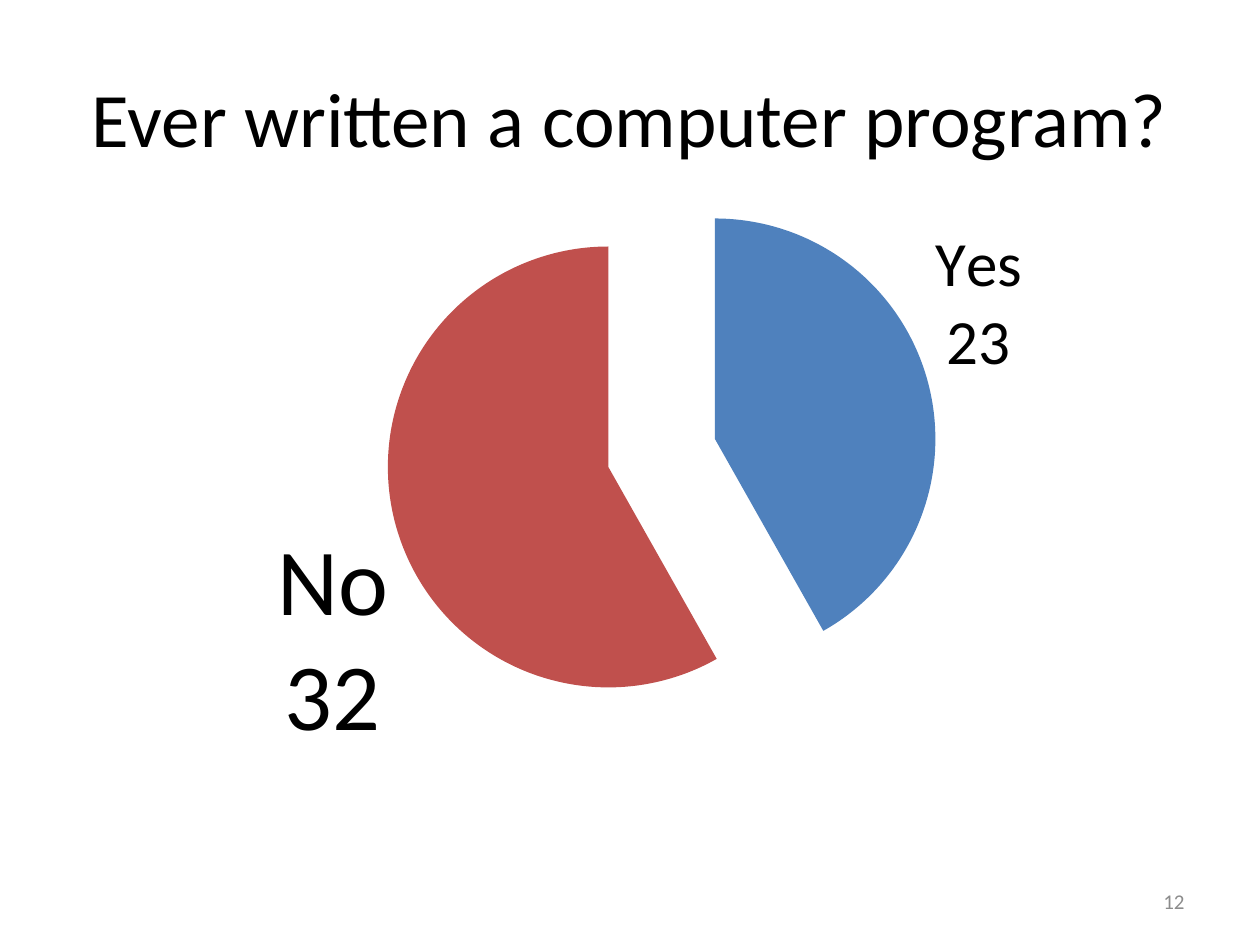
import pptx
import pptx.chart.data
import pptx.dml.color
import pptx.enum.chart
import pptx.enum.text
import pptx.oxml
import pptx.oxml.ns
import pptx.util

BLACK = pptx.dml.color.RGBColor(0x00, 0x00, 0x00)
GRAY = pptx.dml.color.RGBColor(0x8C, 0x8C, 0x8C)
BLUE = pptx.dml.color.RGBColor(0x4F, 0x81, 0xBD)
RED = pptx.dml.color.RGBColor(0xC0, 0x50, 0x4D)

ALIGN = pptx.enum.text.PP_ALIGN
FONT = "Calibri"
SCALE = 914400 // 126
SLIDE_SIZE = (1260, 945)

TEXTS = [
    ("Ever written a computer program?", (63, 38, 1134, 157), 44, BLACK, ALIGN.CENTER),
    ("12", (903, 876, 294, 50), 12, GRAY, ALIGN.RIGHT),
]
ANSWERS = [("Yes", 23, BLUE, 36), ("No", 32, RED, 54)]
CHART_BOX = (105, 126, 1081, 735)
PIE_BOX = (384, 181, 548, 548)
EXPLOSION = 25


def px(*lengths):
    return [pptx.util.Emu(length * SCALE) for length in lengths]


def style_font(font, size, color):
    font.name = FONT
    font.size = pptx.util.Pt(size)
    font.color.rgb = color


def chart_xml(tag, content="", value=None):
    attribute = "" if value is None else f' val="{value}"'
    namespace = pptx.oxml.ns.nsdecls("c")
    return pptx.oxml.parse_xml(f"<c:{tag} {namespace}{attribute}>{content}</c:{tag}>")


def add_text(slide, text, box, size, color, alignment):
    shape = slide.shapes.add_textbox(*px(*box))
    frame = shape.text_frame
    frame.word_wrap = True
    frame.vertical_anchor = pptx.enum.text.MSO_ANCHOR.MIDDLE
    paragraph = frame.paragraphs[0]
    paragraph.alignment = alignment
    run = paragraph.add_run()
    run.text = text
    style_font(run.font, size, color)


def place_pie(chart):
    left, top, width, height = CHART_BOX
    pie_left, pie_top, pie_width, pie_height = PIE_BOX
    fractions = {
        "x": (pie_left - left) / width,
        "y": (pie_top - top) / height,
        "w": pie_width / width,
        "h": pie_height / height,
    }
    content = '<c:layoutTarget val="inner"/><c:xMode val="edge"/><c:yMode val="edge"/>'
    content += "".join(f'<c:{key} val="{value:.2f}"/>' for key, value in fractions.items())
    plot_area = chart.element.xpath(".//c:plotArea")[0]
    for layout in plot_area.xpath("./c:layout"):
        plot_area.remove(layout)
    plot_area.insert(0, chart_xml("layout", f"<c:manualLayout>{content}</c:manualLayout>"))


def add_pie(slide):
    data = pptx.chart.data.CategoryChartData()
    data.categories = [answer[0] for answer in ANSWERS]
    data.add_series("Series 1", [answer[1] for answer in ANSWERS])
    frame = slide.shapes.add_chart(
        pptx.enum.chart.XL_CHART_TYPE.PIE, *px(*CHART_BOX), data
    )
    chart = frame.chart
    chart.has_title = False
    chart.has_legend = False
    style_font(chart.font, 18, BLACK)
    plot = chart.plots[0]
    plot.vary_by_categories = True
    series_element = chart.element.xpath(".//c:ser")[0]
    series_element.xpath("./c:tx")[0].addnext(chart_xml("explosion", value=EXPLOSION))
    for index, (name, count, color, size) in enumerate(ANSWERS):
        point = plot.series[0].points[index]
        point.format.fill.solid()
        point.format.fill.fore_color.rgb = color
        label = point.data_label
        style_font(label.font, size, BLACK)
        label.position = pptx.enum.chart.XL_LABEL_POSITION.OUTSIDE_END
    for label_element in series_element.xpath(".//c:dLbl"):
        label_element.xpath("./c:showCatName")[0].set("val", "1")
        label_element.append(chart_xml("separator", "\n"))
    place_pie(chart)


def main():
    presentation = pptx.Presentation()
    presentation.slide_width, presentation.slide_height = px(*SLIDE_SIZE)
    slide = presentation.slides.add_slide(presentation.slide_layouts[6])
    for text in TEXTS:
        add_text(slide, *text)
    add_pie(slide)
    presentation.save("out.pptx")


if __name__ == "__main__":
    main()
